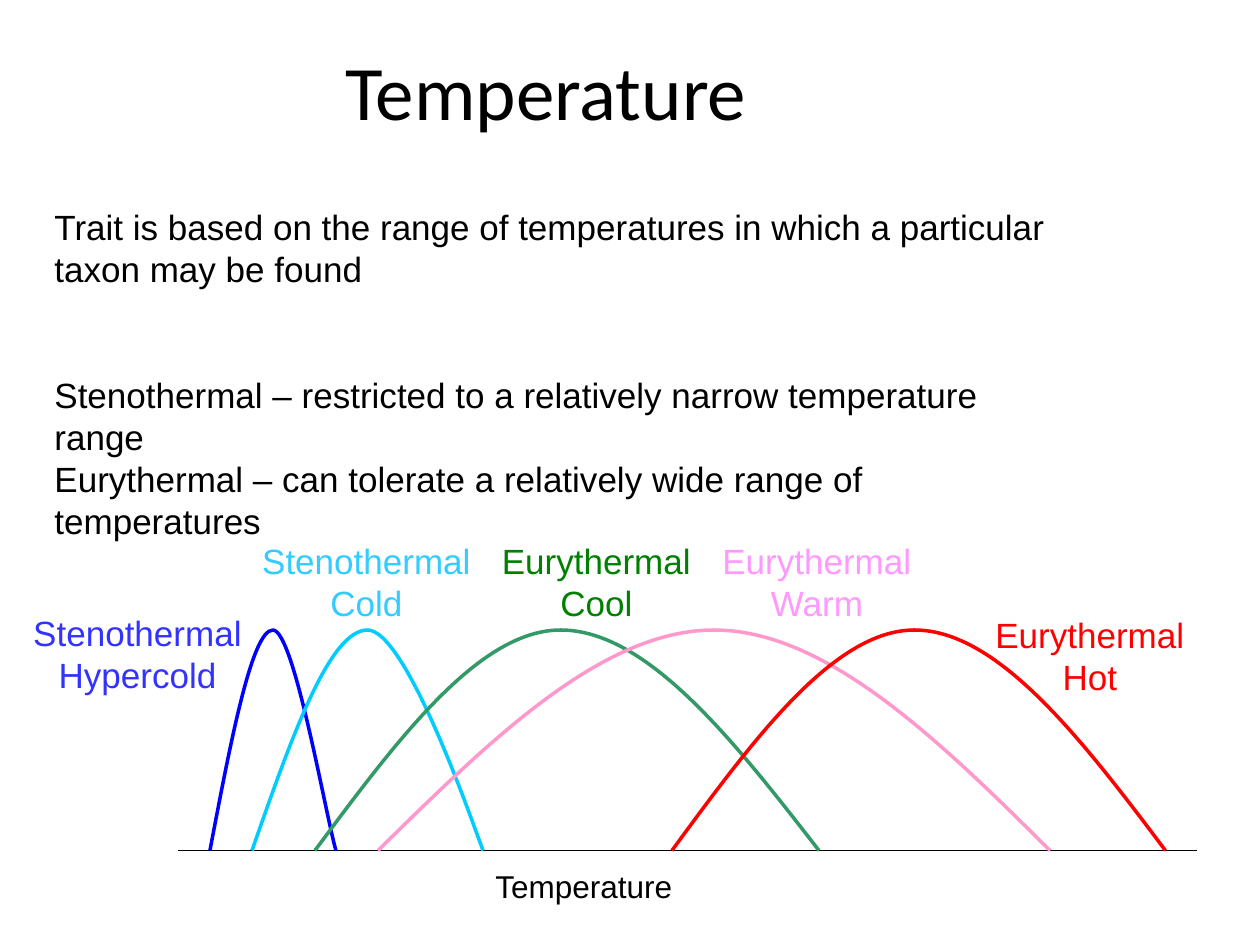
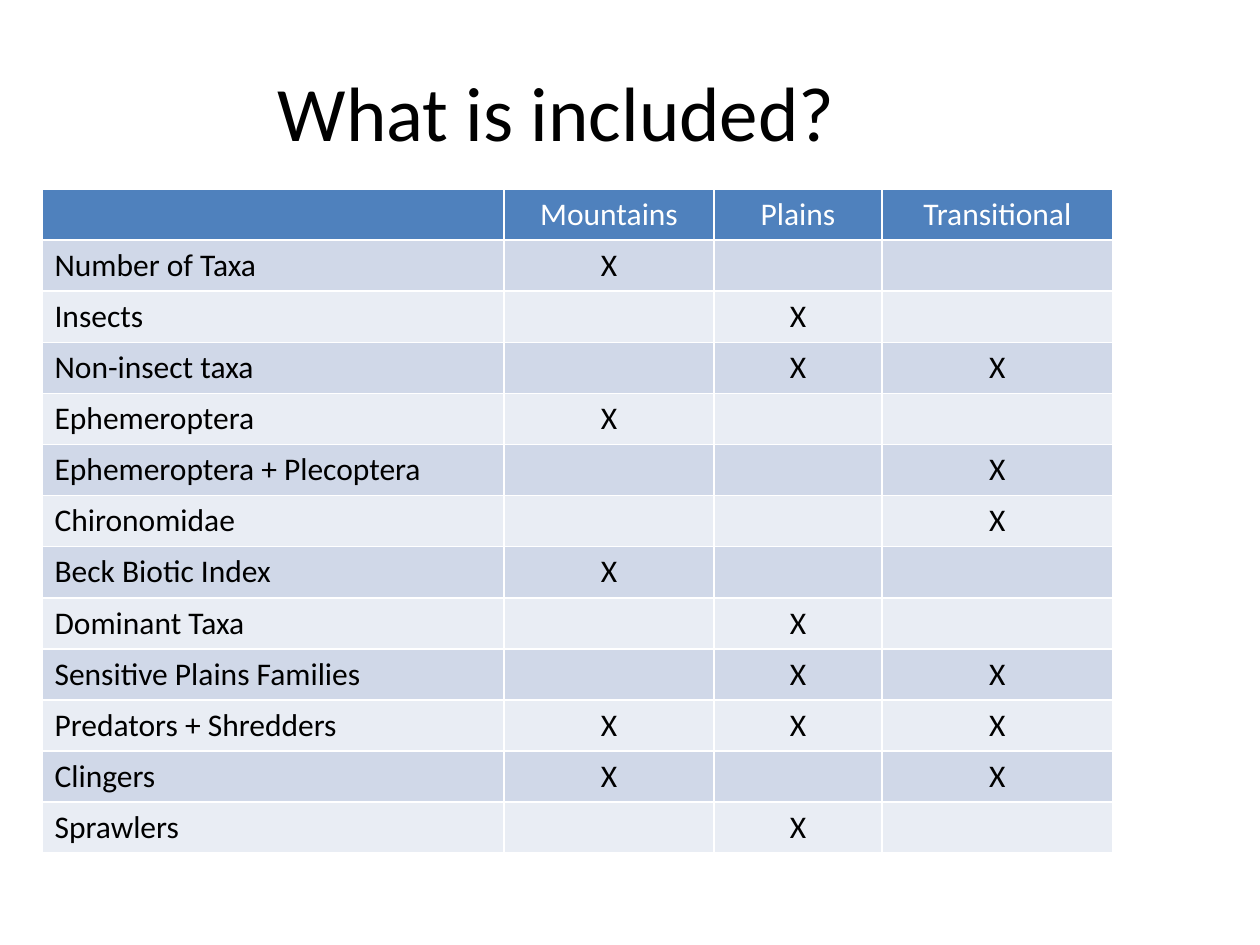
from lxml.etree import SubElement
from pptx import Presentation
from pptx.dml.color import RGBColor as RGB
from pptx.enum.shapes import MSO_CONNECTOR as Connector
from pptx.enum.text import MSO_ANCHOR as Anchor, MSO_AUTO_SIZE as AutoSize, PP_ALIGN as Align
from pptx.oxml.ns import qn
from pptx.util import Inches, Pt

COLS, ROWS = 120, 90  # slide grid, twelve units to the inch
COLORS = {
    "ink": "000000", "white": "FFFFFF",
    "header": "4F81BD", "band_dark": "D0D8E8", "band_light": "E9EDF4",
    "hypercold": "0000FF", "cold": "00CCFF", "cool": "339966", "warm": "FF99CC", "hot": "FF0000",
    "hypercold_label": "3333FF", "cold_label": "33CCFF", "cool_label": "008000",
    "warm_label": "FF99FF", "hot_label": "FF0000",
}


def smooth(freeform):
    """Turn each three straight segments into one cubic curve."""
    outline = next(freeform._element.iter(qn("a:path")))
    segments = outline.findall(qn("a:lnTo"))
    for first in range(0, len(segments), 3):
        cubic = SubElement(outline, qn("a:cubicBezTo"))
        for segment in segments[first:first + 3]:
            cubic.append(segment[0])
            outline.remove(segment)


class Deck:
    def __init__(self):
        self.prs = Presentation()
        self.prs.slide_width, self.prs.slide_height = Inches(10), Inches(7.5)
        self.slide = None

    def x(self, col):
        return round(self.prs.slide_width * col / COLS)

    def y(self, row):
        return round(self.prs.slide_height * row / ROWS)

    def color(self, name):
        return RGB.from_string(COLORS[name])

    def new_slide(self):
        self.slide = self.prs.slides.add_slide(self.prs.slide_layouts[6])

    def style(self, paragraph, size, font, color, align=Align.LEFT):
        paragraph.alignment = align
        paragraph.font.size, paragraph.font.name = Pt(size), font
        paragraph.font.bold = False
        paragraph.font.color.rgb = self.color(color)

    def text(self, col, row, width, height, lines, size=20, font="Arial", color="ink",
             align=Align.LEFT, wrap=False, fit=AutoSize.SHAPE_TO_FIT_TEXT):
        box = self.slide.shapes.add_textbox(self.x(col), self.y(row), self.x(width), self.y(height))
        frame = box.text_frame
        frame.text = "\n".join(lines)
        frame.word_wrap, frame.auto_size = wrap, fit
        for paragraph in frame.paragraphs:
            self.style(paragraph, size, font, color, align)
        return frame

    def title(self, col, row, words):
        frame = self.text(col, row, 102, 15, [words], 44, "Calibri", align=Align.CENTER,
                          wrap=True, fit=AutoSize.NONE)
        frame.vertical_anchor = Anchor.MIDDLE

    def axis(self, start, end, row):
        line = self.slide.shapes.add_connector(
            Connector.STRAIGHT, self.x(start), self.y(row), self.x(end), self.y(row))
        line.line.color.rgb, line.line.width = self.color("ink"), Pt(0.75)
        SubElement(line._element.spPr, qn("a:effectLst"))

    def curve(self, start, peak, end, top, base, tail, color):
        """A bell from start to end; tail is the last control, as shares of the falling half."""
        rise, fall, drop = peak - start, end - peak, base - top
        points = [
            (start + rise / 3, top + drop / 2), (start + rise * 2 / 3, top), (peak, top),
            (peak + fall / 3, top), (peak + fall * tail[0], top + drop * tail[1]), (end, base),
        ]
        builder = self.slide.shapes.build_freeform(self.x(start), self.y(base))
        builder.add_line_segments([(self.x(col), self.y(row)) for col, row in points], close=False)
        bell = builder.convert_to_shape()
        smooth(bell)
        bell.shadow.inherit = False
        bell.fill.background()
        bell.line.color.rgb, bell.line.width = self.color(color), Pt(2)

    def cell(self, cell, words, fill, color, align):
        properties = cell._tc.get_or_add_tcPr()
        for side in "LRTB":
            border = SubElement(properties, qn("a:ln" + side), w=str(Pt(1)))
            SubElement(SubElement(border, qn("a:solidFill")), qn("a:srgbClr"), val=COLORS["white"])
        cell.fill.solid()
        cell.fill.fore_color.rgb = self.color(fill)
        cell.text = words
        self.style(cell.text_frame.paragraphs[0], 18, "Calibri", color, align)

    def table(self, col, row, widths, row_height, rows):
        grid = self.slide.shapes.add_table(
            len(rows), len(widths), self.x(col), self.y(row),
            self.x(sum(widths)), self.y(row_height * len(rows))).table
        for column, width in zip(grid.columns, widths):
            column.width = self.x(width)
        for r, values in enumerate(rows):
            fill = "header" if r == 0 else ("band_light", "band_dark")[r % 2]
            for c, words in enumerate(values):
                self.cell(grid.cell(r, c), words, fill, "ink" if r else "white",
                          Align.CENTER if c else Align.LEFT)


def temperature_slide(deck):
    deck.new_slide()
    deck.title(1, 1, "Temperature")

    # Temperature axis and tolerance curves
    base, top = 81, 60
    deck.axis(17, 114, base)
    even = (0.67, 0.5)
    for start, peak, end, tail, color in (
        (20, 26, 32, (0.83, 0.83), "hypercold"),
        (24, 35, 46, (0.9, 0.86), "cold"),
        (30, 53.4, 78, even, "cool"),
        (36, 68, 100, even, "warm"),
        (64, 87.1, 111, even, "hot"),
    ):
        deck.curve(start, peak, end, top, base, tail, color)

    # Curve labels
    for col, row, width, group, trait in (
        (1.9, 57.6, 22.4, "Stenothermal", "Hypercold"),
        (23.7, 50.8, 22.4, "Stenothermal", "Cold"),
        (46.6, 50.8, 20.4, "Eurythermal", "Cool"),
        (67.6, 50.8, 20.4, "Eurythermal", "Warm"),
        (93.6, 57.8, 20.4, "Eurythermal", "Hot"),
    ):
        deck.text(col, row, width, 9.2, [group, trait], color=trait.lower() + "_label", align=Align.CENTER)

    # Definitions
    definitions = deck.text(4, 19, 99.7, 25.2, [
        "Trait is based on the range of temperatures in which a particular taxon may be found",
        "Stenothermal – restricted to a relatively narrow temperature range",
        "Eurythermal – can tolerate a relatively wide range of temperatures",
    ], wrap=True)
    definitions.paragraphs[1].space_before = Pt(48)
    deck.text(46, 82, 25.3, 6, ["Temperature"], 18)


def metrics_slide(deck):
    deck.new_slide()
    deck.title(2, 3, "What is included?")

    # Metrics used in each region
    regions = ["Mountains", "Plains", "Transitional"]
    metrics = {
        "Number of Taxa": "M",
        "Insects": "P",
        "Non-insect taxa": "PT",
        "Ephemeroptera": "M",
        "Ephemeroptera + Plecoptera": "T",
        "Chironomidae": "T",
        "Beck Biotic Index": "M",
        "Dominant Taxa": "P",
        "Sensitive Plains Families": "PT",
        "Predators + Shredders": "MPT",
        "Clingers": "MT",
        "Sprawlers": "P",
    }
    rows = [[""] + regions]
    for metric, used in metrics.items():
        rows.append([metric] + ["X" if region[0] in used else "" for region in regions])
    deck.table(4, 18, (44, 20, 16, 22), 4.87, rows)


def main():
    deck = Deck()
    temperature_slide(deck)
    metrics_slide(deck)
    deck.prs.save("out.pptx")


if __name__ == "__main__":
    main()
